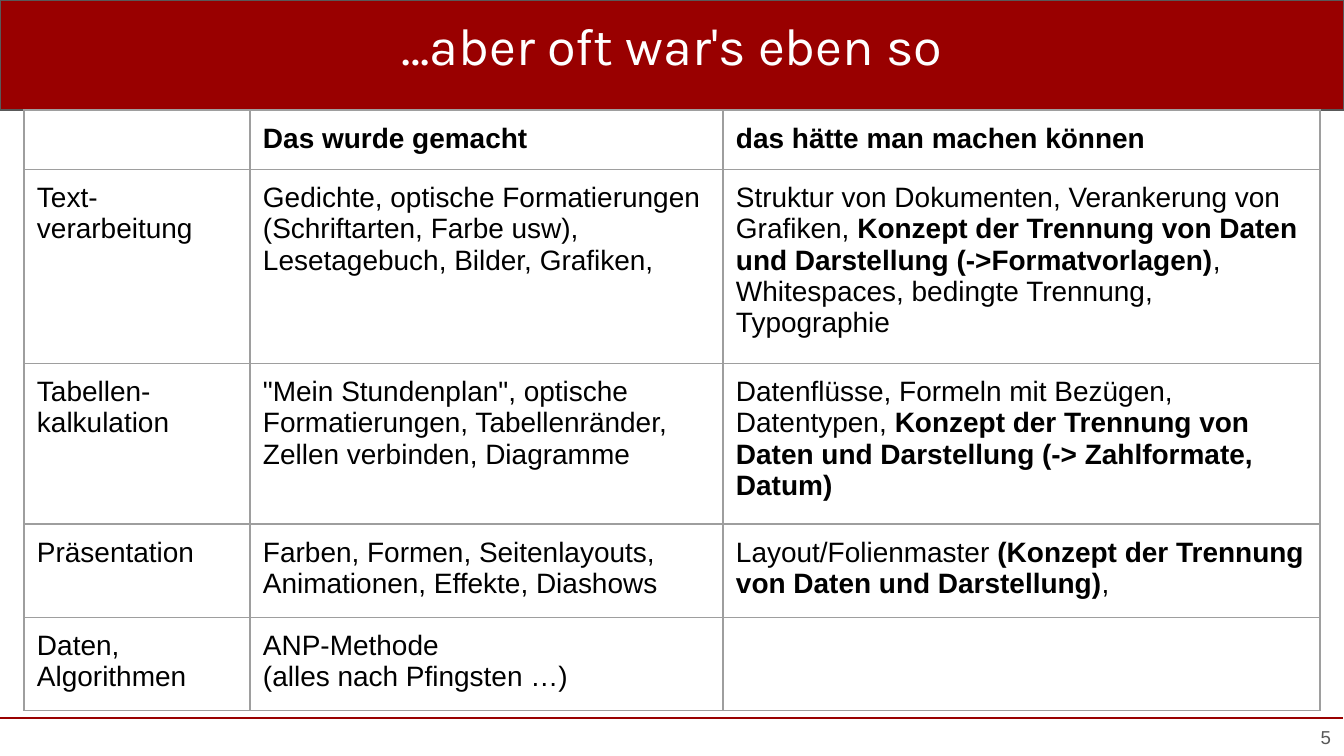
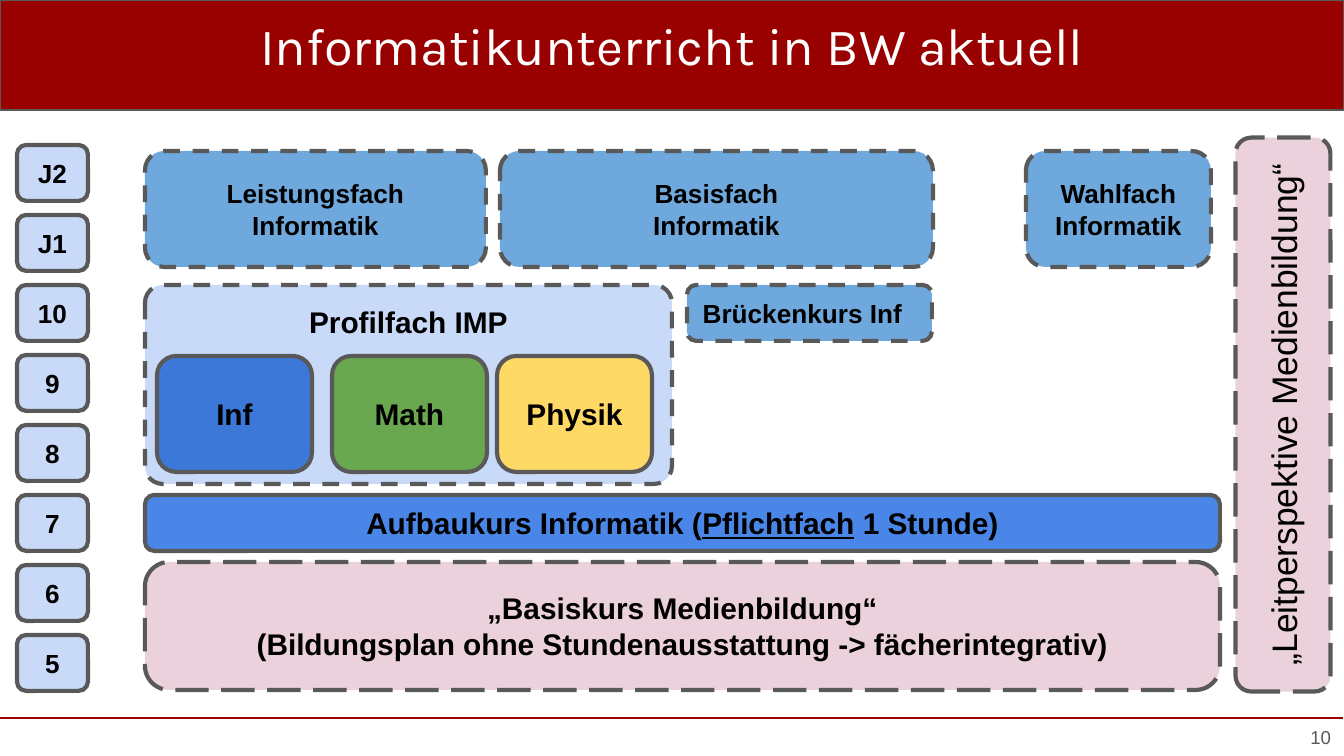
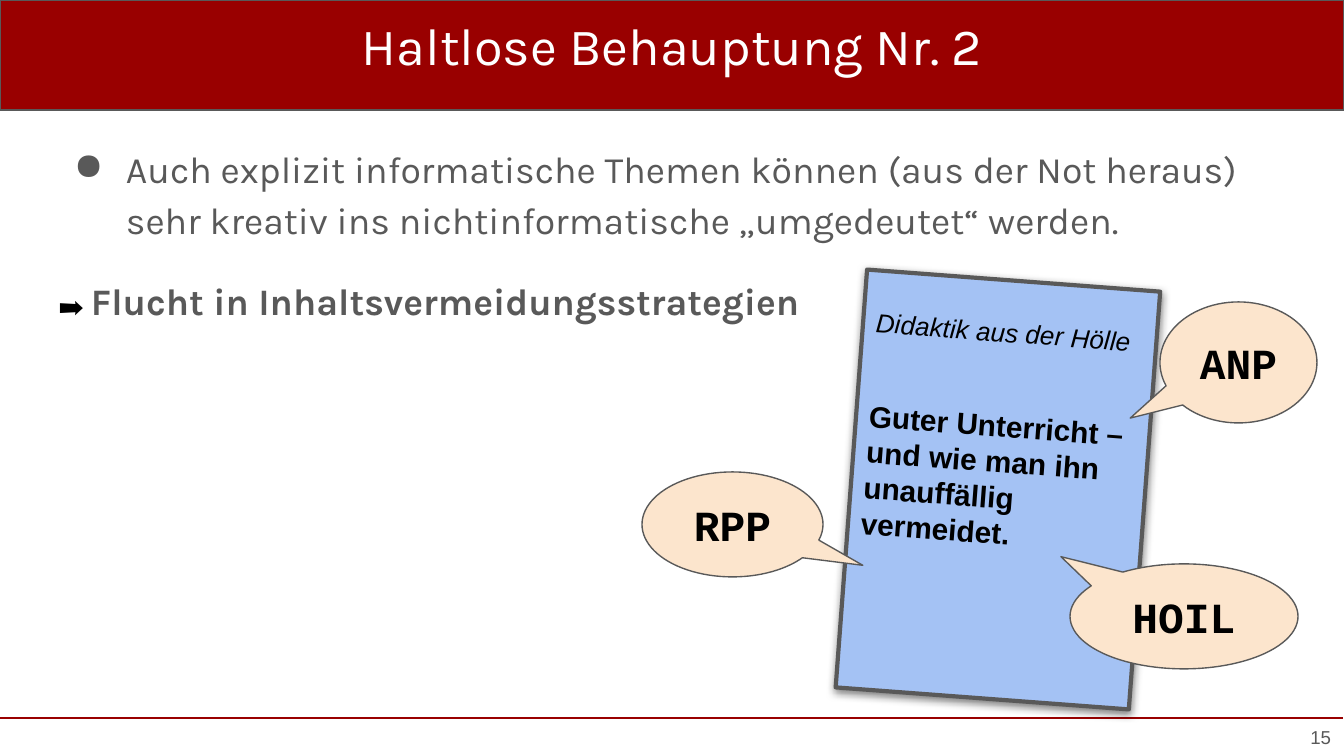
"""Build three slides about teaching computer science in school."""
from lxml.etree import SubElement
from pptx import Presentation
from pptx.dml.color import RGBColor
from pptx.enum.dml import MSO_LINE
from pptx.enum.shapes import MSO_CONNECTOR, MSO_SHAPE
from pptx.enum.text import MSO_ANCHOR, PP_ALIGN
from pptx.oxml.ns import qn
from pptx.util import Emu, Pt

SCALE = 914400 / 134.4
WIDTH, HEIGHT = 1344, 756
BAND_HEIGHT, RULE_TOP, INSET = 110, 718, 13
RED, GRAY, BLACK, WHITE = "990000", "595959", "000000", "FFFFFF"
PALE_BLUE, SKY, PINK, PEACH = "C9DAF8", "6FA8DC", "EAD1DC", "FCE5CD"
BORDER = "9E9E9E"
DASH, LONG_DASH = MSO_LINE.DASH, MSO_LINE.LONG_DASH
BOLD = {"bold": True}
CENTER = {"alignment": PP_ALIGN.CENTER}
RIGHT = {"alignment": PP_ALIGN.RIGHT}
MIDDLE, TOP = MSO_ANCHOR.MIDDLE, MSO_ANCHOR.TOP


def px(value):
    return Emu(round(value * SCALE))


def color(value):
    return RGBColor.from_string(value)


def apply(target, values):
    for name, value in values.items():
        setattr(target, name, value)


def font(size, name="Arial", fill=BLACK, **values):
    return {"size": Pt(size), "name": name, "fill": fill, **values}


class Deck:
    """Hold the shared style and the current slide."""

    def __init__(self):
        self.presentation = Presentation()
        apply(self.presentation, {"slide_width": px(WIDTH), "slide_height": px(HEIGHT)})
        self.slide = None

    def new_slide(self, title, number):
        self.slide = self.presentation.slides.add_slide(self.presentation.slide_layouts[6])
        band = (0, 0, WIDTH, BAND_HEIGHT)
        self.shape(MSO_SHAPE.RECTANGLE, band, RED, 0.75)
        self.rule(RULE_TOP)
        self.text(band, title, font(28, "Karla", WHITE), CENTER)
        self.text((1246, RULE_TOP, 98, HEIGHT - RULE_TOP), number, font(10, fill=GRAY), RIGHT, MIDDLE)

    def rule(self, top):
        line = self.slide.shapes.add_connector(MSO_CONNECTOR.STRAIGHT, 0, px(top), px(WIDTH - 1), px(top))
        line.line.color.rgb = color(RED)
        line.line.width = Pt(1.5)
        SubElement(line._element.spPr, qn("a:effectLst"))

    def shape(self, kind, box, fill, width=2.25, dash=None, adjustments=(), rotation=0):
        shape = self.slide.shapes.add_shape(kind, *map(px, box))
        shape.shadow.inherit = False
        shape.rotation = rotation
        shape.fill.solid()
        shape.fill.fore_color.rgb = color(fill)
        shape.line.color.rgb = color(GRAY)
        apply(shape.line, {"width": Pt(width), "dash_style": dash})
        for index, value in enumerate(adjustments):
            shape.adjustments[index] = value
        return shape

    def label(self, kind, box, fill, text, text_font, layout=CENTER, anchor=MIDDLE, emphasis=None, **look):
        shape = self.shape(kind, box, fill, **look)
        self.fill_frame(self.frame(shape, anchor), text, text_font, layout, emphasis)

    def rounded(self, box, fill, text, size, **options):
        self.label(MSO_SHAPE.ROUNDED_RECTANGLE, box, fill, text, font(size, **BOLD), **options)

    def text(self, box, text, text_font, layout, anchor=TOP):
        frame = self.frame(self.slide.shapes.add_textbox(*map(px, box)), anchor)
        self.fill_frame(frame, text, text_font, layout)
        return frame

    def frame(self, shape, anchor, top=INSET):
        frame = shape.text_frame
        apply(frame, {"word_wrap": True, "vertical_anchor": anchor, "margin_left": px(INSET),
                      "margin_right": px(INSET), "margin_top": px(top), "margin_bottom": px(INSET)})
        return frame

    def fill_frame(self, frame, text, text_font, layout, emphasis=None):
        for index, line in enumerate(text.split("\n")):
            paragraph = frame.add_paragraph() if index else frame.paragraphs[0]
            self.fill_paragraph(paragraph, line, text_font, layout, emphasis)

    def fill_paragraph(self, paragraph, line, text_font, layout, emphasis=None):
        apply(paragraph, layout)
        for index, part in enumerate(line.split("*")):
            if part:
                run = paragraph.add_run()
                run.text = part
                values = {**text_font, **(emphasis or {})} if index % 2 else dict(text_font)
                run.font.color.rgb = color(values.pop("fill"))
                apply(run.font, values)

    def bullet(self, paragraph, indent, hanging):
        properties = paragraph._p.get_or_add_pPr()
        properties.set("marL", str(px(indent)))
        properties.set("indent", str(-px(hanging)))
        SubElement(SubElement(properties, qn("a:buClr")), qn("a:srgbClr"), val=GRAY)
        SubElement(properties, qn("a:buChar"), char="●")

    def drop_shadow(self, shape):
        effects = shape._element.spPr.find(qn("a:effectLst"))
        shadow = SubElement(effects, qn("a:outerShdw"), blurRad=str(Pt(4.5)), dist=str(Pt(1.5)),
                            dir="5400000", algn="bl", rotWithShape="0")
        SubElement(SubElement(shadow, qn("a:srgbClr"), val=BLACK), qn("a:alpha"), val="50000")

    def table(self, left, top, widths, heights, rows):
        box = (left, top, sum(widths), sum(heights))
        table = self.slide.shapes.add_table(len(rows), len(widths), *map(px, box)).table
        apply(table, {"first_row": False, "horz_banding": False})
        for column, width in zip(table.columns, widths):
            column.width = px(width)
        for index, (row, height, texts) in enumerate(zip(table.rows, heights, rows)):
            row.height = px(height)
            for cell, text in zip(row.cells, texts):
                self.cell(cell, text, font(15, bold=index == 0))

    def cell(self, cell, text, text_font):
        apply(cell, {f"margin_{side}": px(INSET) for side in ("left", "right", "top", "bottom")})
        properties = cell._tc.get_or_add_tcPr()
        for side in "LRTB":
            border = SubElement(properties, qn(f"a:ln{side}"), w=str(Pt(0.75)))
            SubElement(SubElement(border, qn("a:solidFill")), qn("a:srgbClr"), val=BORDER)
        cell.fill.background()
        self.fill_frame(cell.text_frame, text, text_font, {}, BOLD)
        if not text:
            size = str(int(text_font["size"].pt * 100))
            SubElement(cell.text_frame.paragraphs[0]._p, qn("a:endParaRPr"), sz=size)


def build_comparison(deck):
    deck.new_slide("…aber oft war's eben so", "5")
    deck.table(24, BAND_HEIGHT, (226, 473, 597), (58, 182, 151, 89, 89), (
        ("", "Das wurde gemacht", "das hätte man machen können"),
        ("Text-\nverarbeitung",
         "Gedichte, optische Formatierungen (Schriftarten, Farbe usw), Lesetagebuch, Bilder, Grafiken,",
         "Struktur von Dokumenten, Verankerung von Grafiken, *Konzept der Trennung von Daten und "
         "Darstellung (->Formatvorlagen)*, Whitespaces, bedingte Trennung, Typographie"),
        ("Tabellen-\nkalkulation",
         "\"Mein Stundenplan\", optische Formatierungen, Tabellenränder, Zellen verbinden, Diagramme",
         "Datenflüsse, Formeln mit Bezügen, Datentypen, *Konzept der Trennung von Daten und "
         "Darstellung (-> Zahlformate, Datum)*"),
        ("Präsentation", "Farben, Formen, Seitenlayouts, Animationen, Effekte, Diashows",
         "Layout/Folienmaster *(Konzept der Trennung von Daten und Darstellung)*,"),
        ("Daten, Algorithmen", "ANP-Methode\n(alles nach Pfingsten …)", ""),
    ))


def build_curriculum(deck):
    deck.new_slide("Informatikunterricht in BW aktuell", "10")
    first_top, step, height, left, wide = 145, 70, 56, 145, 1075
    for index, grade in enumerate(("J2", "J1", "10", "9", "8", "7", "6", "5")):
        deck.rounded((17, first_top + index * step, 71, height), PALE_BLUE, grade, 14)
    for box_left, width, course in ((left, 341, "Leistungsfach Informatik"),
                                    (500, 433, "Basisfach\nInformatik"),
                                    (1026, 185, "Wahlfach\nInformatik")):
        deck.rounded((box_left, 151, width, 116), SKY, course, 14, dash=DASH)
    deck.rounded((left, 285, 527, 199), PALE_BLUE, "Profilfach IMP", 16,
                 dash=DASH, anchor=TOP, adjustments=(0.09,))
    for box_left, fill, subject in ((157, "3C78D8", "Inf"), (332, "6AA84F", "Math"), (497, "FFD966", "Physik")):
        deck.rounded((box_left, 356, 155, 116), fill, subject, 16)
    deck.rounded((687, 285, 245, height), SKY, "Brückenkurs Inf", 14, dash=DASH,
                 layout={"alignment": PP_ALIGN.LEFT})
    deck.rounded((left, first_top + 5 * step, wide, height), "4A86E8",
                 "Aufbaukurs Informatik (*Pflichtfach* 1 Stunde)", 16, emphasis={"underline": True})
    deck.rounded((left, 562, wide, 128), PINK,
                 "„Basiskurs Medienbildung“\n(Bildungsplan ohne Stundenausstattung -> fächerintegrativ)",
                 16, dash=LONG_DASH, adjustments=(0.19,))
    deck.label(MSO_SHAPE.ROUNDED_RECTANGLE, (1006, 367, 554, 95), PINK,
               "„Leitperspektive Medienbildung“", font(19), dash=LONG_DASH, rotation=270)


def build_claim(deck):
    deck.new_slide("Haltlose Behauptung Nr. 2", "15")
    book = deck.shape(MSO_SHAPE.RECTANGLE, (851, 280, 294, 419), "A4C2F4", rotation=4.3)
    deck.drop_shadow(book)
    frame = deck.frame(book, TOP, top=36)
    left = {"alignment": PP_ALIGN.LEFT}
    deck.fill_frame(frame, "Didaktik aus der Hölle", font(14, italic=True), left)
    for line, gap in (("Guter Unterricht –", 32), ("und wie man ihn unauffällig vermeidet.", 0)):
        deck.fill_paragraph(frame.add_paragraph(), line, font(16, **BOLD), {**left, "space_before": Pt(gap)})

    spacing = {"line_spacing": 1.15}
    body = deck.text((46, 126, 1253, 208),
                     "Auch explizit informatische Themen können (aus der Not heraus) sehr kreativ "
                     "ins nichtinformatische „umgedeutet“ werden.", font(20, "Karla", GRAY), spacing)
    deck.bullet(body.paragraphs[0], 67, 52)
    deck.fill_paragraph(body.add_paragraph(), "*➡️ *Flucht in Inhaltsvermeidungsstrategien",
                        font(20, "Karla", GRAY, **BOLD),
                        {**spacing, "space_before": Pt(16), "space_after": Pt(16)}, font(13, bold=False))

    for box, method, tip in (((1160, 302, 157, 121), "ANP", (-0.69, 0.46)),
                             ((642, 472, 181, 105), "RPP", (0.72, 0.39)),
                             ((1070, 564, 228, 105), "HOIL", (-0.54, -0.57))):
        deck.label(MSO_SHAPE.OVAL_CALLOUT, box, PEACH, method, font(23, "Courier New", **BOLD),
                   width=0.75, adjustments=tip)


def main():
    deck = Deck()
    build_comparison(deck)
    build_curriculum(deck)
    build_claim(deck)
    deck.presentation.save("out.pptx")


if __name__ == "__main__":
    main()
